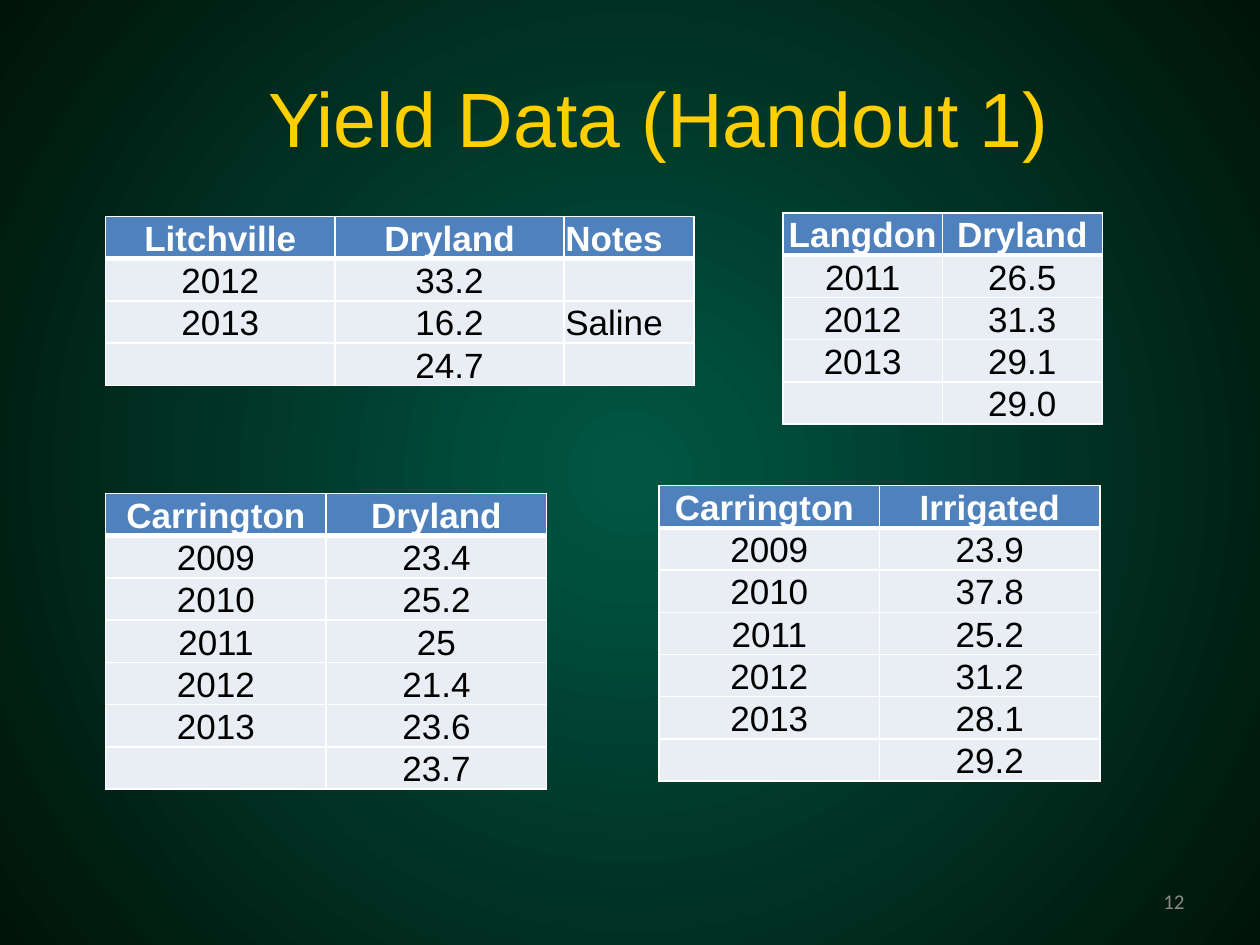
from lxml.etree import SubElement
from pptx import Presentation
from pptx.dml.color import RGBColor
from pptx.enum.text import MSO_ANCHOR, PP_ALIGN
from pptx.oxml.ns import qn
from pptx.util import Pt

# Content: left, top, column widths, rows
TITLE = "Yield Data (Handout 1)"
NUMBER = "12"
TABLES = [
    (60.4, 123.7, (131, 131, 74.2), [
        ("Litchville", "Dryland", "Notes"),
        ("2012", "33.2", ""),
        ("2013", "16.2", "Saline"),
        ("", "24.7", "")]),
    (60.4, 282, (126, 126), [
        ("Carrington", "Dryland"),
        ("2009", "23.4"),
        ("2010", "25.2"),
        ("2011", "25"),
        ("2012", "21.4"),
        ("2013", "23.6"),
        ("", "23.7")]),
    (376.6, 277.5, (126, 126), [
        ("Carrington ", "Irrigated"),
        ("2009", "23.9"),
        ("2010", "37.8"),
        ("2011", "25.2"),
        ("2012", "31.2"),
        ("2013", "28.1"),
        ("", "29.2")]),
    (447.5, 121.7, (91, 91.4), [
        ("Langdon", "Dryland"),
        ("2011", "26.5"),
        ("2012", "31.3"),
        ("2013", "29.1"),
        ("", "29.0")]),
]
THEME = {
    "font": "Arial", "small": "Calibri",
    "title": 44, "cell": 20, "number": 12,
    "gold": "FFCF01", "grey": "898989", "white": "FFFFFF", "black": "000000",
    "head": "4F81BD", "body": "E9EDF4", "core": "005643", "edge": "001409",
}
ROW = 23.1


def tint(name):
    return RGBColor.from_string(THEME[name])


def write(frame, text, size, color, align, face="font", bold=False):
    para = frame.paragraphs[0]
    para.alignment = align
    run = para.add_run()
    run.text = text
    run.font.name = THEME[face]
    run.font.size = Pt(THEME[size])
    run.font.bold = bold
    run.font.color.rgb = tint(color)


def label(slide, box, *style):
    frame = slide.shapes.add_textbox(*map(Pt, box)).text_frame
    frame.word_wrap = True
    frame.vertical_anchor = MSO_ANCHOR.MIDDLE
    write(frame, *style)


def border(cell, side, width):
    line = SubElement(cell._tc.get_or_add_tcPr(), qn("a:ln" + side), w=str(Pt(width)))
    fill = SubElement(line, qn("a:solidFill"))
    SubElement(fill, qn("a:srgbClr"), val=THEME["white"])


def style(cell, text, row, col):
    head = row == 0
    cell.margin_left = cell.margin_right = Pt(0.7)
    cell.margin_top = Pt(0.1)
    cell.margin_bottom = 0
    cell.vertical_anchor = MSO_ANCHOR.BOTTOM
    # The rule under the header is heavier
    for side in "LRTB":
        heavy = (row, side) in ((0, "B"), (1, "T"))
        border(cell, side, 3 if heavy else 1)
    cell.fill.solid()
    cell.fill.fore_color.rgb = tint("head" if head else "body")
    if text:
        align = PP_ALIGN.LEFT if col == 2 else PP_ALIGN.CENTER
        write(cell.text_frame, text, "cell", "white" if head else "black",
              align, bold=head)


def grid(slide, left, top, widths, rows):
    size = (left, top, sum(widths), ROW * len(rows))
    table = slide.shapes.add_table(len(rows), len(widths), *map(Pt, size)).table
    for col, width in zip(table.columns, widths):
        col.width = Pt(width)
    for r, row in enumerate(rows):
        table.rows[r].height = Pt(ROW)
        for c, text in enumerate(row):
            style(table.cell(r, c), text, r, c)


def backdrop(slide):
    fill = slide.background.fill
    fill.gradient()
    for stop, name, place in zip(fill.gradient_stops, ("core", "edge"), (0.02, 1)):
        stop.color.rgb = tint(name)
        stop.position = place
    # Radial instead of linear
    grad = slide.element.find(".//" + qn("a:gradFill"))
    grad.remove(grad.find(qn("a:lin")))
    ring = SubElement(grad, qn("a:path"), path="circle")
    SubElement(ring, qn("a:fillToRect"), l="50000", t="50000", r="50000", b="50000")


def main():
    deck = Presentation()
    deck.slide_width, deck.slide_height = Pt(720), Pt(540)
    slide = deck.slides.add_slide(deck.slide_layouts[6])
    backdrop(slide)
    # Title and slide number
    label(slide, (142.5, 21.6, 468, 90), TITLE, "title", "gold", PP_ALIGN.CENTER)
    label(slide, (516, 500.5, 168, 28.8), NUMBER, "number", "grey",
          PP_ALIGN.RIGHT, "small")
    # Yield tables
    for spec in TABLES:
        grid(slide, *spec)
    deck.save("out.pptx")


if __name__ == "__main__":
    main()
